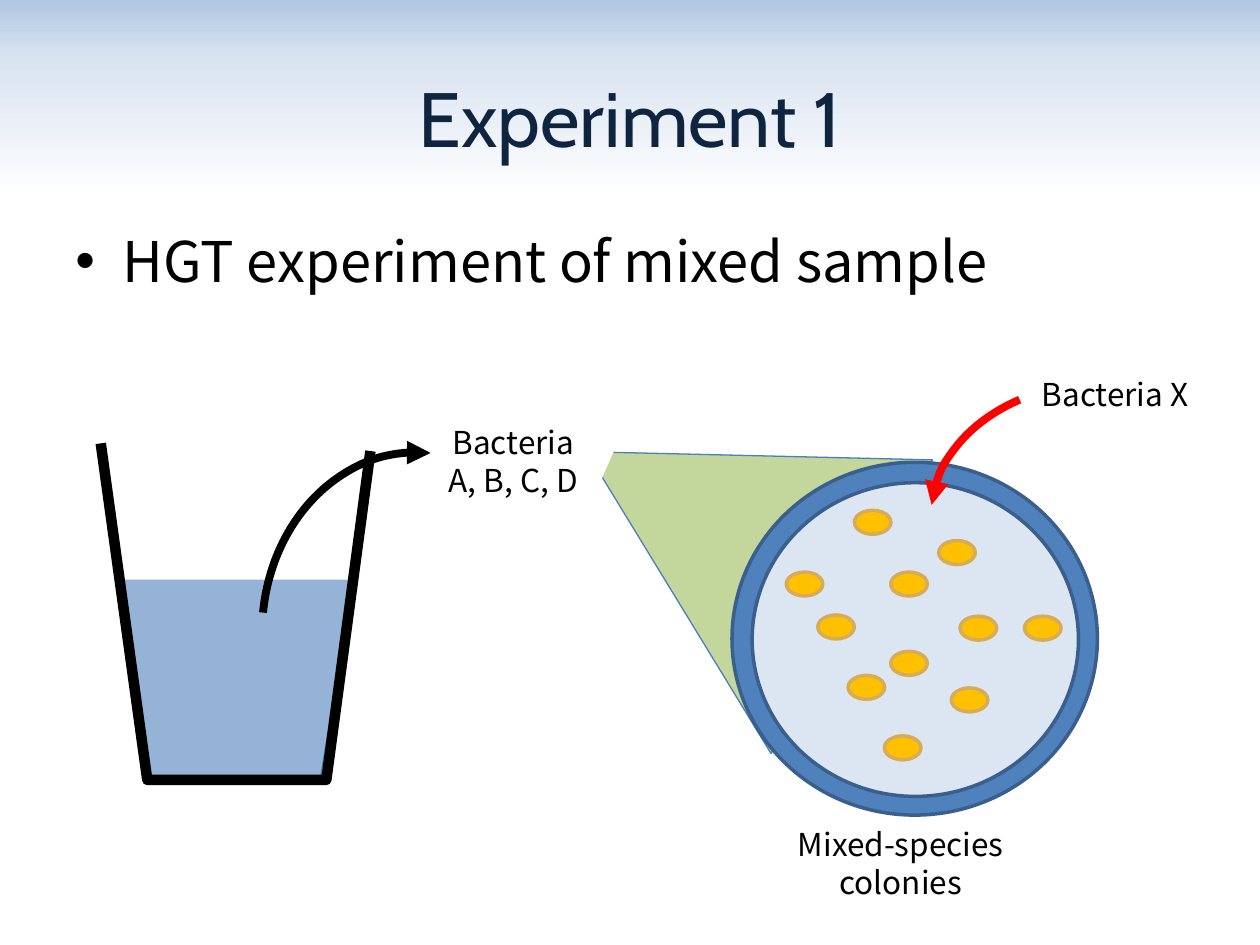
from copy import deepcopy
from dataclasses import dataclass

from lxml.etree import SubElement
from pptx import Presentation
from pptx.dml.color import RGBColor as Rgb
from pptx.enum.shapes import MSO_SHAPE as Kind
from pptx.enum.text import MSO_ANCHOR as Anchor, PP_ALIGN as Align
from pptx.oxml.ns import qn
from pptx.util import Pt

HUE = {
    "sky": "B0C6E1", "mist": "D8E3F0", "white": "FFFFFF", "navy": "0F243E",
    "black": "000000", "red": "FF0000", "water": "95B3D7", "edge": "4B7EBC",
    "cone": "C3D69B", "dish": "4F81BD", "rim": "3A5F8C", "agar": "DCE6F2",
    "gold": "FFC000", "tan": "D6AC58",
}
HEAD, BODY = "Cabin", "Noto Sans CJK KR"


@dataclass
class Box:
    left: float
    top: float
    width: float
    height: float

    def points(self) -> list:
        return [Pt(v) for v in (self.left, self.top, self.width, self.height)]


@dataclass
class Look:
    fill: str | None
    line: str
    weight: float


@dataclass
class Path:
    dots: list
    look: Look


@dataclass
class Curve:
    box: Box
    start: float
    end: float
    hue: str
    flip: bool = False


@dataclass
class Label:
    box: Box
    text: str
    align: Align = Align.CENTER


def color(name: str) -> Rgb:
    return Rgb.from_string(HUE[name])


def write(shape, text: str, font=BODY, size=18, hue="black",
          align=Align.LEFT, anchor=Anchor.TOP):
    frame = shape.text_frame
    frame.word_wrap = True
    frame.vertical_anchor = anchor
    para = frame.paragraphs[0]
    para.text = text
    para.alignment = align
    for run in para.runs:
        run.font.name, run.font.size = font, Pt(size)
        run.font.color.rgb = color(hue)
    return para


def style(shape, look: Look) -> None:
    shape.shadow.inherit = False
    if look.fill:
        shape.fill.solid()
        shape.fill.fore_color.rgb = color(look.fill)
    else:
        shape.fill.background()
    shape.line.color.rgb = color(look.line)
    shape.line.width = Pt(look.weight)


def draw_path(shapes, path: Path) -> None:
    dots = [(Pt(x), Pt(y)) for x, y in path.dots]
    pen = shapes.build_freeform(*dots[0], scale=1.0)
    pen.add_line_segments(dots[1:], close=False)
    style(pen.convert_to_shape(), path.look)


def draw_disc(shapes, box: Box, look: Look) -> None:
    style(shapes.add_shape(Kind.OVAL, *box.points()), look)


def draw_curve(shapes, curve: Curve) -> None:
    arc = shapes.add_shape(Kind.ARC, *curve.box.points())
    for i, angle in enumerate((curve.start, curve.end)):
        arc.adjustments[i] = angle * 0.6
    style(arc, Look(None, curve.hue, 4.5))
    if curve.flip:
        arc.element.spPr.find(qn("a:xfrm")).set("flipH", "1")
    SubElement(arc.line._get_or_add_ln(), qn("a:headEnd"), type="triangle")


def draw_label(shapes, label: Label) -> None:
    write(shapes.add_textbox(*label.box.points()), label.text, align=label.align)


def paint_back(slide) -> None:
    fill = slide.background.fill
    fill.gradient()
    fill.gradient_angle = 270
    stops = slide.element.find(".//" + qn("a:gsLst"))
    stops.append(deepcopy(stops[0]))
    shades = (("sky", 0), ("mist", 0.06), ("white", 0.21))
    for stop, (hue, place) in zip(fill.gradient_stops, shades):
        stop.color.rgb = color(hue)
        stop.position = place


def add_bullet(para, indent: float) -> None:
    props = para._p.get_or_add_pPr()
    props.set("marL", str(Pt(indent)))
    props.set("indent", str(-Pt(indent)))
    SubElement(props, qn("a:buFont"), typeface="Arial")
    SubElement(props, qn("a:buChar"), char="•")


WATER = Path([(70.6, 331.2), (85.7, 445.7), (182.9, 445.7), (201.6, 336.2),
              (201.6, 331.2)], Look("water", "edge", 0.75))
BEAKER = Path([(57.6, 253.4), (84.2, 445.7), (186.5, 445.7), (211.7, 257.8)],
              Look(None, "black", 6))
CONE = Path([(344.2, 272.9), (440.6, 430.6), (532.8, 262.8), (350.6, 258.5)],
            Look("cone", "edge", 0.75))
SAMPLE = Curve(Box(149.8, 258.5, 177.1, 205.9), 265.69, 352.65, "black", flip=True)
INTAKE = Curve(Box(532.1, 218.9, 197.3, 151.2), 183.45, 234, "red")
DISH = Box(418.3, 264.2, 208.8, 201.6)
AGAR = Box(429.8, 275.8, 186.5, 179.3)
SPOTS = [(488.2, 291.6), (449.3, 326.9), (509, 326.9), (505.4, 420.5),
         (484.6, 385.9), (536.4, 308.9), (543.6, 393.1), (467.3, 351.4),
         (509, 372.2), (585.4, 352.1), (548.6, 352.1)]
LABELS = [
    Label(Box(236.9, 238.3, 113, 51.1), "Bacteria\vA, B, C, D"),
    Label(Box(440.6, 468, 148.3, 51.1), "Mixed-species colonies"),
    Label(Box(588.2, 211, 187.2, 28.8), "Bacteria X", Align.LEFT),
]


def main() -> None:
    deck = Presentation()
    deck.slide_width, deck.slide_height = Pt(720), Pt(540)
    slide = deck.slides.add_slide(deck.slide_layouts[5])
    shapes = slide.shapes
    paint_back(slide)

    title = shapes.title
    title.left, title.top, title.width, title.height = Box(36, 21.6, 648, 90).points()
    write(title, "Experiment 1", font=HEAD, size=44, hue="navy",
          align=Align.CENTER, anchor=Anchor.MIDDLE)
    body = shapes.add_textbox(*Box(36, 126, 648, 356.4).points())
    para = write(body, "HGT experiment of mixed sample", size=32)
    para.space_before = Pt(6.4)
    add_bullet(para, 27)

    draw_path(shapes, WATER)
    draw_path(shapes, BEAKER)
    draw_curve(shapes, SAMPLE)
    draw_path(shapes, CONE)
    draw_disc(shapes, DISH, Look("dish", "rim", 2))
    draw_disc(shapes, AGAR, Look("agar", "rim", 2))
    for left, top in SPOTS:
        draw_disc(shapes, Box(left, top, 20.9, 13.7), Look("gold", "tan", 2))
    for label in LABELS:
        draw_label(shapes, label)
    draw_curve(shapes, INTAKE)
    deck.save("out.pptx")


if __name__ == "__main__":
    main()
